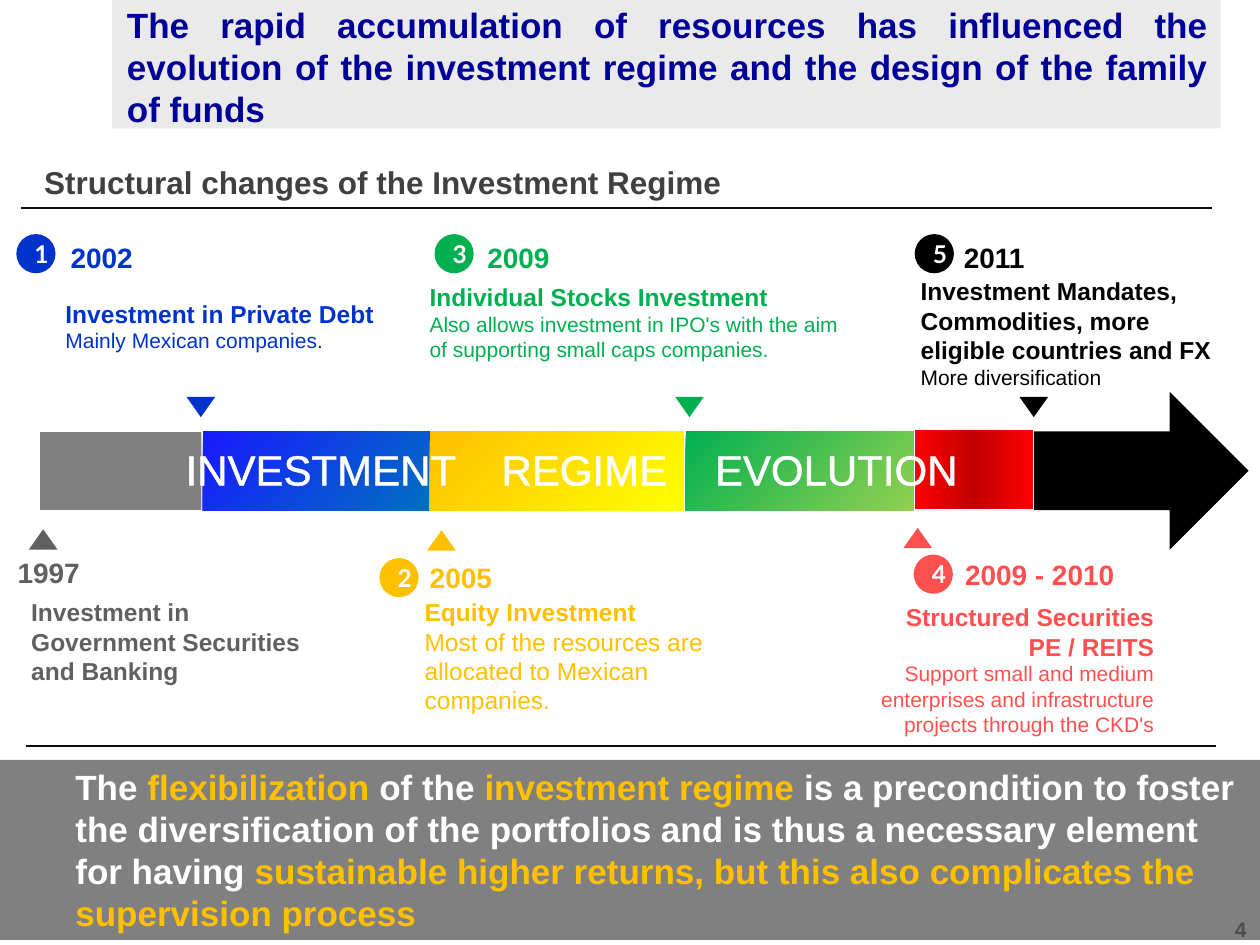
"""Build a timeline slide on the evolution of the investment regime."""
from copy import deepcopy

from lxml import etree
from pptx import Presentation
from pptx.dml.color import RGBColor
from pptx.enum.shapes import MSO_CONNECTOR, MSO_SHAPE
from pptx.enum.text import MSO_ANCHOR, PP_ALIGN
from pptx.oxml.ns import qn
from pptx.util import Cm, Pt

RECT, OVAL = MSO_SHAPE.RECTANGLE, MSO_SHAPE.OVAL
DOWN_ARROW, RIGHT_ARROW = MSO_SHAPE.DOWN_ARROW, MSO_SHAPE.RIGHT_ARROW
STRAIGHT = MSO_CONNECTOR.STRAIGHT
TOP, MIDDLE = MSO_ANCHOR.TOP, MSO_ANCHOR.MIDDLE
LEFT, CENTER, RIGHT, JUSTIFY = PP_ALIGN.LEFT, PP_ALIGN.CENTER, PP_ALIGN.RIGHT, PP_ALIGN.JUSTIFY

WHITE = RGBColor(0xFF, 0xFF, 0xFF)
BLACK = RGBColor(0, 0, 0)
RULE = RGBColor(0x0D, 0x0D, 0x0D)
PALE = RGBColor(0xEA, 0xEA, 0xEA)
GRAY = RGBColor(0x80, 0x80, 0x80)
SLATE = RGBColor(0x60, 0x60, 0x60)
HEADING = RGBColor(0x40, 0x40, 0x40)
PAGE = RGBColor(0x4D, 0x4D, 0x4D)
NAVY = RGBColor(0, 0, 0x99)
BLUE = RGBColor(0, 0x33, 0xCC)
BRIGHT_BLUE = RGBColor(0x19, 0x19, 0xFF)
SEA_BLUE = RGBColor(0, 0x70, 0xC0)
GOLD = RGBColor(0xFF, 0xC0, 0)
YELLOW = RGBColor(0xFF, 0xFF, 0)
GREEN = RGBColor(0, 0xB0, 0x50)
LIME = RGBColor(0x92, 0xD0, 0x50)
CORAL = RGBColor(0xFF, 0x50, 0x50)
RED = RGBColor(0xFF, 0, 0)
DARK_RED = RGBColor(0xC0, 0, 0)

UPPER_MARKER = 8.0
UPPER_YEAR = 4.72

SEGMENTS = [
    (18.44, 8.66, 2.39, 1.6, [RED, DARK_RED, RED], 0),
    (4.09, 8.69, 4.57, 1.6, [BRIGHT_BLUE, SEA_BLUE], 45),
    (8.66, 8.69, 5.13, 1.6, [GOLD, YELLOW], 45),
    (13.82, 8.69, 4.6, 1.6, [GREEN, LIME], 45),
]

MILESTONES = [
    dict(color=SLATE, year="1997", year_box=(0, 11.07, 1.96, 0.94), marker=(0.58, 10.67), up=True,
         body_box=(0.38, 11.91, 6.5, 2.06),
         heads=["Investment in Government Securities and Banking"]),
    dict(color=BLUE, year="2002", year_box=(1.07, UPPER_YEAR, 1.96, 0.94),
         marker=(3.76, UPPER_MARKER), number="1", badge=(0.33, UPPER_YEAR),
         body_box=(1.07, 5.89, 7.29, 1.37),
         heads=["Investment in Private Debt"], detail="Mainly Mexican companies."),
    dict(color=GOLD, year="2005", year_box=(8.31, 11.18, 1.96, 0.94), marker=(8.61, 10.69), up=True,
         number="2", badge=(7.65, 11.25), body_box=(8.31, 11.91, 7.06, 2.64),
         heads=["Equity Investment"], detail_size=14,
         detail="Most of the resources are allocated to Mexican companies."),
    dict(color=GREEN, year="2009", year_box=(9.47, UPPER_YEAR, 1.96, 0.94),
         marker=(13.61, UPPER_MARKER), number="3", badge=(8.76, UPPER_YEAR),
         body_box=(8.41, 5.56, 8.79, 1.88), heads=["Individual Stocks Investment"],
         detail="Also allows investment in IPO's with the aim of supporting small caps companies."),
    dict(color=CORAL, year="2009 - 2010", year_box=(19.08, 11.1, 3.63, 0.94), marker=(18.21, 10.64),
         up=True, number="4", badge=(18.42, 11.18), body_box=(16, 12.01, 7.52, 3),
         heads=["Structured Securities", "PE / REITS"], year_align=RIGHT, align=RIGHT,
         detail="Support small and medium enterprises and infrastructure projects through the CKD's"),
    dict(color=BLACK, year="2011", year_box=(19.18, UPPER_YEAR, 3.63, 0.94),
         marker=(20.55, UPPER_MARKER), number="5", badge=(18.44, UPPER_YEAR),
         body_box=(18.31, 5.44, 6.6, 2.57), year_align=LEFT,
         heads=["Investment Mandates, Commodities, more eligible countries and FX"],
         detail="More diversification"),
]


def add_run(p, text, size=14, color=BLACK, bold=True, font="Arial"):
    r = p.add_run()
    r.text = text
    r.font.name, r.font.size, r.font.bold = font, Pt(size), bold
    r.font.color.rgb = color
    return r


class Deck:
    def __init__(self, s):
        self.s = s

    def shape(self, kind, x, y, w, h, color=None):
        sp = self.s.shapes.add_shape(kind, Cm(x), Cm(y), Cm(w), Cm(h))
        sp.shadow.inherit = False
        sp.line.fill.background()
        if color is not None:
            sp.fill.solid()
            sp.fill.fore_color.rgb = color
        return sp

    def gradient(self, x, y, w, h, colors, angle):
        sp = self.shape(RECT, x, y, w, h)
        sp.fill.gradient()
        sp.fill.gradient_angle = -angle % 360
        stops = sp._element.spPr.find(".//" + qn("a:gsLst"))
        for _ in colors[2:]:
            stops.append(deepcopy(stops[0]))
        for i, (stop, color) in enumerate(zip(sp.fill.gradient_stops, colors)):
            stop.position = i / (len(colors) - 1)
            stop.color.rgb = color

    def text(self, box, paragraphs, align=LEFT, anchor=TOP, inset=(0.25, 0.13)):
        tf = self.s.shapes.add_textbox(*map(Cm, box)).text_frame
        tf.word_wrap = True
        tf.vertical_anchor = anchor
        tf.margin_left = tf.margin_right = Cm(inset[0])
        tf.margin_top = tf.margin_bottom = Cm(inset[1])
        for i, (text, style) in enumerate(paragraphs):
            p = tf.add_paragraph() if i else tf.paragraphs[0]
            p.alignment = align
            add_run(p, text, **style)
        return tf

    def rule(self, x1, x2, y):
        c = self.s.shapes.add_connector(STRAIGHT, Cm(x1), Cm(y), Cm(x2), Cm(y))
        c.line.color.rgb, c.line.width = RULE, Pt(1.25)
        etree.SubElement(c._element.spPr, qn("a:effectLst"))

    def badge(self, x, y, number, color):
        tf = self.shape(OVAL, x, y, 0.79, 0.79, color).text_frame
        tf.vertical_anchor = MIDDLE
        tf.paragraphs[0].alignment = LEFT
        add_run(tf.paragraphs[0], number, color=WHITE, font="Lato")

    def milestone(self, color, year, year_box, marker, body_box, heads, detail=None, detail_size=12,
                  number=None, badge=None, up=False, year_align=CENTER, align=LEFT):
        sp = self.shape(DOWN_ARROW, *marker, 0.58, 0.41, color)
        sp.adjustments[0], sp.adjustments[1] = 0.5, 1
        sp.rotation = 180 if up else 0
        self.text(year_box, [(year, dict(size=16, color=color))], year_align)
        body = [(head, dict(color=color)) for head in heads]
        if detail:
            body.append((detail, dict(size=detail_size, color=color, bold=False)))
        self.text(body_box, body, align)
        if number:
            self.badge(*badge, number, color)

    def banner(self, box, words, centers):
        text = "".join("\t" + word for word in words)
        tf = self.text(box, [(text, dict(size=24, color=WHITE, bold=False))])
        p = tf.paragraphs[0]
        tabs = etree.SubElement(p._p.get_or_add_pPr(), qn("a:tabLst"))
        for center in centers:
            etree.SubElement(tabs, qn("a:tab"), pos=str(Cm(center)), algn="ctr")
        ln = etree.Element(qn("a:ln"), w=str(Pt(1.45)))
        fill = etree.SubElement(ln, qn("a:solidFill"))
        etree.SubElement(fill, qn("a:srgbClr"), val=str(WHITE))
        p.runs[0].font._element.insert(0, ln)

    def conclusion(self, box, runs):
        tf = self.shape(RECT, *box, GRAY).text_frame
        tf.vertical_anchor = MIDDLE
        tf.margin_left = tf.margin_right = tf.margin_top = tf.margin_bottom = Cm(0.25)
        p = tf.paragraphs[0]
        p.alignment, p.level = LEFT, 1
        pPr = p._p.get_or_add_pPr()
        pPr.set("marL", str(Cm(1.27)))
        pPr.set("indent", "0")
        for text, color in runs:
            add_run(p, text, 20, color)


def main():
    prs = Presentation()
    prs.slide_width, prs.slide_height = Cm(25.4), Cm(19.05)
    deck = Deck(prs.slides.add_slide(prs.slide_layouts[6]))
    deck.shape(RECT, 2.26, 0, 22.35, 2.59, PALE)
    deck.text((2.31, 0, 22.3, 2.69), [(
        "The rapid accumulation of resources has influenced the evolution of the investment regime "
        "and the design of the family of funds", dict(size=20, color=NAVY))],
        JUSTIFY, MIDDLE, (0.25, 0.03))
    deck.text((0.64, 3.15, 19.71, 1.02),
              [("Structural changes of the Investment Regime", dict(size=18, color=HEADING))])
    deck.rule(0.43, 24.43, 4.19)
    deck.shape(RIGHT_ARROW, 20.85, 7.9, 4.32, 3.18, BLACK)
    deck.shape(RECT, 0.81, 8.71, 3.25, 1.57, GRAY)
    for segment in SEGMENTS:
        deck.gradient(*segment)
    deck.banner((0.71, 8.81, 21.64, 1.27), ["INVESTMENT", "REGIME", "EVOLUTION"], [5.51, 10.82, 15.9])
    for milestone in MILESTONES:
        deck.milestone(**milestone)
    deck.rule(0.53, 24.51, 15.04)
    deck.conclusion((0, 15.32, 25.4, 3.63), [
        ("The ", WHITE), ("flexibilization ", GOLD), ("of the ", WHITE), ("investment regime ", GOLD),
        ("is a precondition to foster the diversification of the portfolios and is thus "
         "a necessary element for having ", WHITE),
        ("sustainable higher returns, but this also complicates the supervision process", GOLD)])
    deck.text((23.98, 18.34, 1.4, 0.66), [("4", dict(size=12, color=PAGE))], RIGHT)
    prs.save("out.pptx")


if __name__ == "__main__":
    main()
